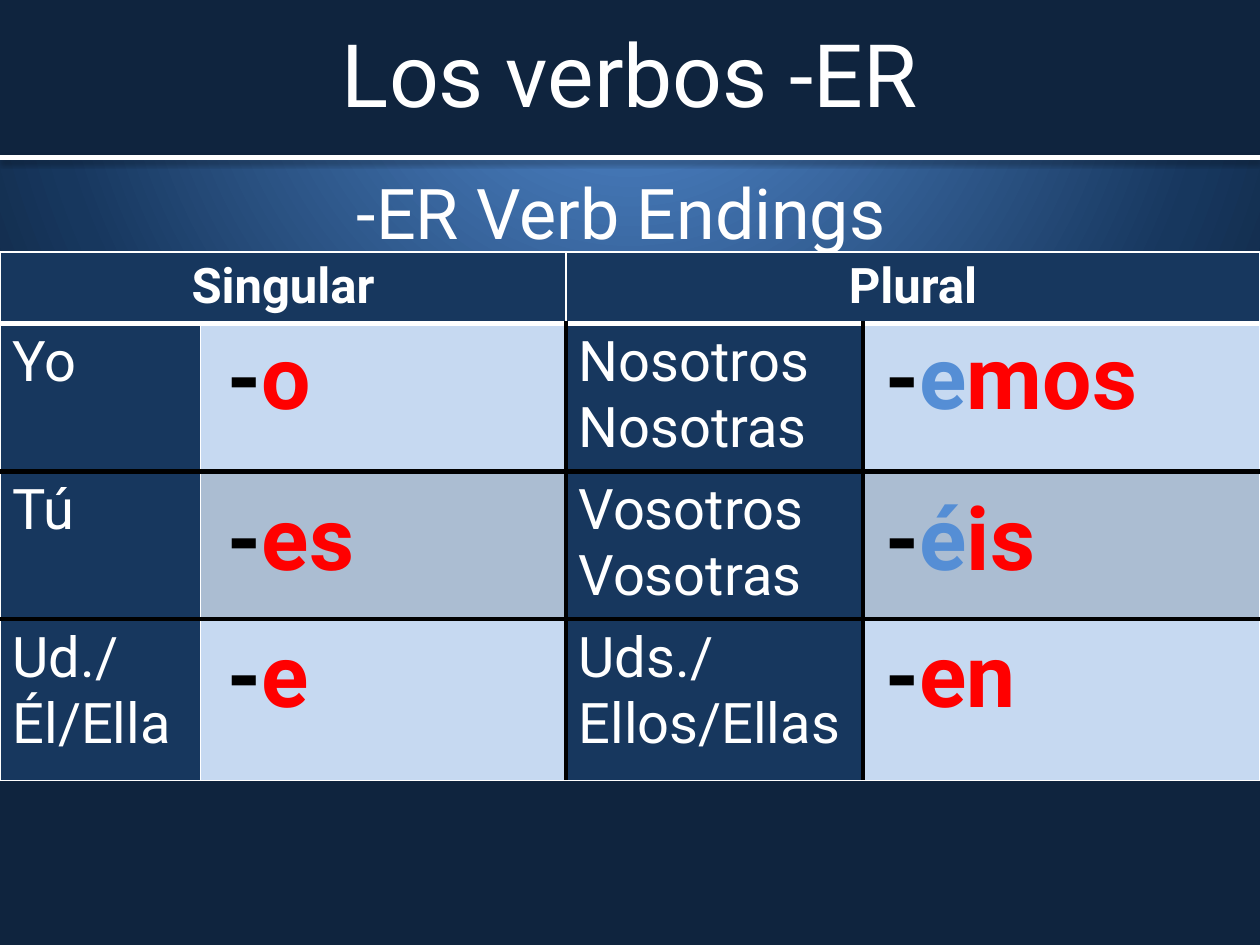
from pptx import Presentation
from pptx.dml.color import RGBColor
from pptx.enum.shapes import MSO_CONNECTOR as Connector, MSO_SHAPE as Shape
from pptx.enum.text import MSO_ANCHOR as Anchor, PP_ALIGN as Align
from pptx.oxml import parse_xml
from pptx.oxml.ns import nsdecls
from pptx.util import Cm, Pt

COLORS = {
    "white": "FFFFFF", "black": "000000", "red": "FF0000", "blue": "558ED5",
    "navy": "17375E", "night": "0F243E", "pale": "C6D9F1", "dusk": "ABBDD2",
}
WIDTH, HEIGHT, BAND = 25.4, 19.05, 3.18
COLUMNS = [4.04, 7.37, 5.99, 8.0]
ROWS = [1.42, 2.98, 2.98, 3.25]
PRONOUNS = [
    (["Yo"], ["Nosotros", "Nosotras"]),
    (["Tú"], ["Vosotros", "Vosotras"]),
    (["Ud./Él/Ella"], ["Uds./Ellos/Ellas"]),
]
ENDINGS = [
    (4.34, 6.48, 6.25, [("o", "red")]),
    (4.34, 9.73, 5.94, [("es", "red")]),
    (4.34, 12.5, 6.25, [("e", "red")]),
    (17.6, 6.48, 7.16, [("e", "blue"), ("mos", "red")]),
    (17.6, 9.73, 6.4, [("é", "blue"), ("is", "red")]),
    (17.6, 12.5, 6.1, [("en", "red")]),
]
THIN, THICK, HEAVY = ("white", 1), ("white", 3), ("black", 3)
SIDE_EDGES = [THIN, THIN, HEAVY, HEAVY, THIN]
LEVEL_EDGES = [THIN, THICK, HEAVY, HEAVY, THIN]


def rgb(name):
    """Return the named colour."""
    return RGBColor.from_string(COLORS[name])


def paint_background(page):
    """Give the page a round gradient centred above its top edge."""
    stops = "".join(
        f'<a:gs pos="{place * 1000}"><a:srgbClr val="{COLORS[name]}"/></a:gs>'
        for place, name in [(0, "blue"), (75, "navy"), (100, "night")])
    page.element.cSld.insert(0, parse_xml(
        f'<p:bg {nsdecls("p", "a")}><p:bgPr><a:gradFill><a:gsLst>{stops}</a:gsLst>'
        '<a:path path="circle"><a:fillToRect l="50000" t="-80000" r="50000" b="180000"/>'
        '</a:path></a:gradFill><a:effectLst/></p:bgPr></p:bg>'))


def add_span(para, text, size, color="white", bold=False):
    """Append a formatted run to a paragraph."""
    span = para.add_run()
    span.text = text
    formats = {"name": "Roboto", "size": Pt(size), "bold": bold}
    for key, value in formats.items():
        setattr(span.font, key, value)
    span.font.color.rgb = rgb(color)


def add_heading(page, text, size, top, height, anchor, inset):
    """Add a centred line of text across the page."""
    box = page.shapes.add_textbox(0, Cm(top), Cm(WIDTH), Cm(height))
    formats = {"word_wrap": True, "vertical_anchor": anchor, "margin_top": Cm(inset)}
    for key, value in formats.items():
        setattr(box.text_frame, key, value)
    para = box.text_frame.paragraphs[0]
    para.alignment = Align.CENTER
    add_span(para, text, size)


def add_band(page):
    """Add the dark band behind the title."""
    band = page.shapes.add_shape(Shape.RECTANGLE, 0, 0, Cm(WIDTH), Cm(BAND))
    band.shadow.inherit = False
    band.fill.solid()
    band.fill.fore_color.rgb = rgb("night")
    band.line.fill.background()


def add_rule(page):
    """Add the white line with a soft shadow below the band."""
    rule = page.shapes.add_connector(
        Connector.STRAIGHT, 0, Cm(BAND), Cm(WIDTH), Cm(BAND))
    rule.line.color.rgb = rgb("white")
    rule.line.width = Pt(3)
    rule.element.spPr.append(parse_xml(
        f'<a:effectLst {nsdecls("a")}><a:outerShdw blurRad="{Pt(3.1)}" dist="{Pt(1.6)}" '
        f'dir="5400000" rotWithShape="0"><a:srgbClr val="{COLORS["black"]}">'
        '<a:alpha val="38000"/></a:srgbClr></a:outerShdw></a:effectLst>'))


def set_borders(cell, edges):
    """Draw the left, right, top and bottom edges, None meaning no line."""
    for side, edge in zip("LRTB", edges):
        fill, width = "<a:noFill/>", 0
        if edge:
            color, width = edge
            fill = f'<a:solidFill><a:srgbClr val="{COLORS[color]}"/></a:solidFill>'
        cell._tc.get_or_add_tcPr().append(parse_xml(
            f'<a:ln{side} {nsdecls("a")} w="{Pt(width)}">{fill}</a:ln{side}>'))


def add_grid(page, left, top, columns, rows):
    """Add a table without banding and with the given tracks."""
    grid = page.shapes.add_table(
        len(rows), len(columns), Cm(left), Cm(top), Cm(sum(columns)), Cm(sum(rows))).table
    grid.first_row = grid.horz_banding = False
    for column, width in zip(grid.columns, columns):
        column.width = Cm(width)
    for row, height in zip(grid.rows, rows):
        row.height = Cm(height)
    return grid


def cell_color(row, column):
    """Return the fill name for a place in the verb table."""
    if row == 0 or column % 2 == 0:
        return "navy"
    return "dusk" if row == 2 else "pale"


def add_verb_table(page):
    """Add the table of pronouns."""
    grid = add_grid(page, 0, 5.08, COLUMNS, ROWS)
    for row in range(len(ROWS)):
        sides = SIDE_EDGES if row else [THIN] * 5
        for column in range(len(COLUMNS)):
            cell = grid.cell(row, column)
            set_borders(cell, sides[column:column + 2] + LEVEL_EDGES[row:row + 2])
            cell.fill.solid()
            cell.fill.fore_color.rgb = rgb(cell_color(row, column))
    for column, label in [(0, "Singular"), (2, "Plural")]:
        cell = grid.cell(0, column)
        cell.merge(grid.cell(0, column + 1))
        para = cell.text_frame.paragraphs[0]
        para.alignment = Align.CENTER
        add_span(para, label, 28, bold=True)
    for row, pair in enumerate(PRONOUNS, 1):
        for column, lines in zip((0, 2), pair):
            frame = grid.cell(row, column).text_frame
            for index, line in enumerate(lines):
                para = frame.add_paragraph() if index else frame.paragraphs[0]
                add_span(para, line, 32)


def add_ending(page, left, top, width, parts):
    """Add a clear one-cell table with a verb ending."""
    cell = add_grid(page, left, top, [width], [2.36]).cell(0, 0)
    set_borders(cell, [None] * 4)
    cell.fill.background()
    for text, color in [("-", "black"), *parts]:
        add_span(cell.text_frame.paragraphs[0], text, 50, color, bold=True)


def main():
    """Build and save the slide."""
    deck = Presentation()
    deck.slide_width, deck.slide_height = Cm(WIDTH), Cm(HEIGHT)
    page = deck.slides.add_slide(deck.slide_layouts[6])
    paint_background(page)
    add_band(page)
    add_heading(page, "-ER Verb Endings ", 40, BAND, 13.2, Anchor.TOP, 0.23)
    add_rule(page)
    add_heading(page, "Los verbos -ER", 50, 0, 2.7, Anchor.MIDDLE, 0.33)
    add_verb_table(page)
    for ending in ENDINGS:
        add_ending(page, *ending)
    deck.save("out.pptx")


if __name__ == "__main__":
    main()
